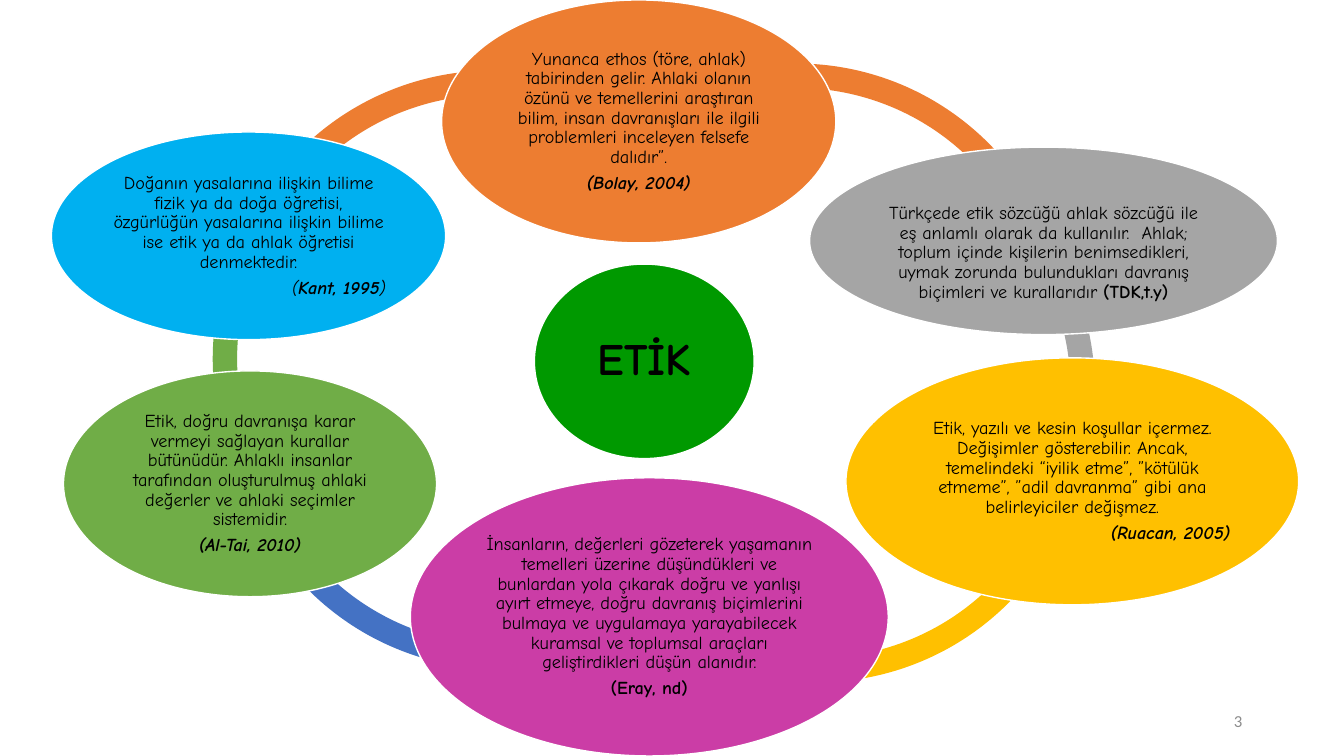
from pptx import Presentation
from pptx.dml.color import RGBColor
from pptx.enum.shapes import MSO_SHAPE
from pptx.enum.text import MSO_ANCHOR, PP_ALIGN
from pptx.util import Inches, Pt

COLORS = {
    "orange": "ED7D31", "green": "70AD47", "blue": "4472C4", "yellow": "FFC000",
    "gray": "A5A5A5", "dark green": "009900", "magenta": "CB3DA6", "sky": "00B0F0",
    "white": "FFFFFF", "black": "000000", "number": "8C8C8C",
}
FONT = "Comic Neue"
ARC_SIZE = 5.38
ARC_THICKNESS = 0.045
DEGREE = 0.6  # adjustment units in one degree of a block arc
TEXT_INSET = 0.02
CENTER, RIGHT = PP_ALIGN.CENTER, PP_ALIGN.RIGHT

# left, top, start angle, end angle, colour
ARCS = [
    (2.19, 0.70, 203.55, 303.73, "orange"),
    (2.11, 0.87, 151.88, 207.72, "green"),
    (2.27, 1.26, 55.85, 161.00, "blue"),
    (5.41, 1.39, 15.26, 129.18, "yellow"),
    (5.48, 1.17, 326.03, 20.47, "gray"),
    (5.21, 0.63, 233.68, 339.19, "orange"),
]

# Each paragraph is (alignment, runs); each run is (text, style),
# where style holds "b" for bold and "i" for italic.
ELLIPSES = [
    {"box": (5.3, 2.62, 2.18, 1.93), "color": "dark green", "size": 32,
     "paragraphs": [(CENTER, [("ETİK", "b")])]},
    {"box": (4.38, 0, 3.91, 2.41), "color": "orange", "paragraphs": [
        (CENTER, [("Yunanca ethos (töre, ahlak) tabirinden gelir. Ahlaki olanın özünü ve "
                   "temellerini araştıran bilim, insan davranışları ile ilgili problemleri "
                   "inceleyen felsefe dalıdır”.", "")]),
        (CENTER, [("(Bolay, 2004)", "bi")])]},
    {"box": (8.03, 1.46, 4.64, 1.86), "color": "gray", "top_inset": 0.26, "paragraphs": [
        (CENTER, [("Türkçede etik sözcüğü ahlak sözcüğü ile eş anlamlı olarak da "
                   "kullanılır.  Ahlak; toplum içinde kişilerin benimsedikleri, uymak "
                   "zorunda bulundukları davranış biçimleri ve kurallarıdır ", ""),
                  ("(TDK,t.y)", "b")])]},
    {"box": (8.39, 3.55, 4.49, 2.45), "color": "yellow", "paragraphs": [
        (CENTER, [("Etik, yazılı ve kesin koşullar içermez. Değişimler gösterebilir. Ancak, "
                   "temelindeki “iyilik etme”, ”kötülük etmeme”, ”adil davranma” gibi ana "
                   "belirleyiciler değişmez.", "")]),
        (RIGHT, [("(Ruacan, 2005)", "bi")])]},
    {"box": (4.07, 4.74, 4.74, 2.76), "color": "magenta", "paragraphs": [
        (CENTER, [("İnsanların, değerleri gözeterek yaşamanın temelleri üzerine "
                   "düşündükleri ve bunlardan yola çıkarak doğru ve yanlışı ayırt etmeye, "
                   "doğru davranış biçimlerini bulmaya ve uygulamaya yarayabilecek kuramsal "
                   "ve toplumsal araçları geliştirdikleri düşün alanıdır.", "")]),
        (CENTER, [("(Eray, nd)", "b")])]},
    {"box": (0.63, 3.68, 3.7, 2.24), "color": "green", "paragraphs": [
        (CENTER, [("Etik, doğru davranışa karar vermeyi sağlayan kurallar bütünüdür. "
                   "Ahlaklı insanlar tarafından oluşturulmuş ahlaki değerler ve ahlaki "
                   "seçimler sistemidir.", "")]),
        (CENTER, [("(Al-Tai, 2010)", "bi")])]},
    {"box": (0.51, 1.31, 3.91, 2.06), "color": "sky", "paragraphs": [
        (CENTER, [("Doğanın yasalarına ilişkin bilime fizik ya da doğa öğretisi, özgürlüğün "
                   "yasalarına ilişkin bilime ise etik ya da ahlak öğretisi denmektedir.", "")]),
        (RIGHT, [("(", "i"), ("Kant, 1995", "bi"), (")", "i")])]},
]
PAGE_NUMBER = {"box": (9.42, 6.95, 3, 0.4), "text": "3"}


def rgb(name):
    return RGBColor.from_string(COLORS[name])


def add_filled_shape(slide, kind, box, color):
    shape = slide.shapes.add_shape(kind, *map(Inches, box))
    shape.shadow.inherit = False
    shape.fill.solid()
    shape.fill.fore_color.rgb = rgb(color)
    return shape


def add_run(paragraph, text, font_name, size, color, style=""):
    run = paragraph.add_run()
    run.text = text
    run.font.name = font_name
    run.font.size = Pt(size)
    run.font.color.rgb = rgb(color)
    run.font.bold = "b" in style
    run.font.italic = "i" in style


def add_arc(slide, left, top, start, end, color):
    arc = add_filled_shape(slide, MSO_SHAPE.BLOCK_ARC, (left, top, ARC_SIZE, ARC_SIZE), color)
    arc.line.fill.background()
    for index, value in enumerate((start * DEGREE, end * DEGREE, ARC_THICKNESS)):
        arc.adjustments[index] = value


def add_ellipse(slide, box, color, paragraphs, size=13, top_inset=TEXT_INSET):
    ellipse = add_filled_shape(slide, MSO_SHAPE.OVAL, box, color)
    ellipse.line.color.rgb = rgb("white")
    ellipse.line.width = Pt(1)
    frame = ellipse.text_frame
    frame.word_wrap = True
    frame.vertical_anchor = MSO_ANCHOR.MIDDLE
    frame.margin_left = frame.margin_right = frame.margin_bottom = Inches(TEXT_INSET)
    frame.margin_top = Inches(top_inset)
    for index, (alignment, runs) in enumerate(paragraphs):
        paragraph = frame.add_paragraph() if index else frame.paragraphs[0]
        paragraph.alignment = alignment
        paragraph.line_spacing = 0.9
        paragraph.space_after = Pt(round(size * 0.35, 1))
        for text, style in runs:
            add_run(paragraph, text, FONT, size, "black", style)


def add_page_number(slide, box, text):
    frame = slide.shapes.add_textbox(*map(Inches, box)).text_frame
    frame.word_wrap = True
    frame.vertical_anchor = MSO_ANCHOR.MIDDLE
    paragraph = frame.paragraphs[0]
    paragraph.alignment = RIGHT
    add_run(paragraph, text, "Calibri", 12, "number")


def main():
    presentation = Presentation()
    presentation.slide_width = Inches(13.33)
    presentation.slide_height = Inches(7.5)
    slide = presentation.slides.add_slide(presentation.slide_layouts[6])
    for arc in ARCS:
        add_arc(slide, *arc)
    for ellipse in ELLIPSES:
        add_ellipse(slide, **ellipse)
    add_page_number(slide, **PAGE_NUMBER)
    presentation.save("out.pptx")


if __name__ == "__main__":
    main()
